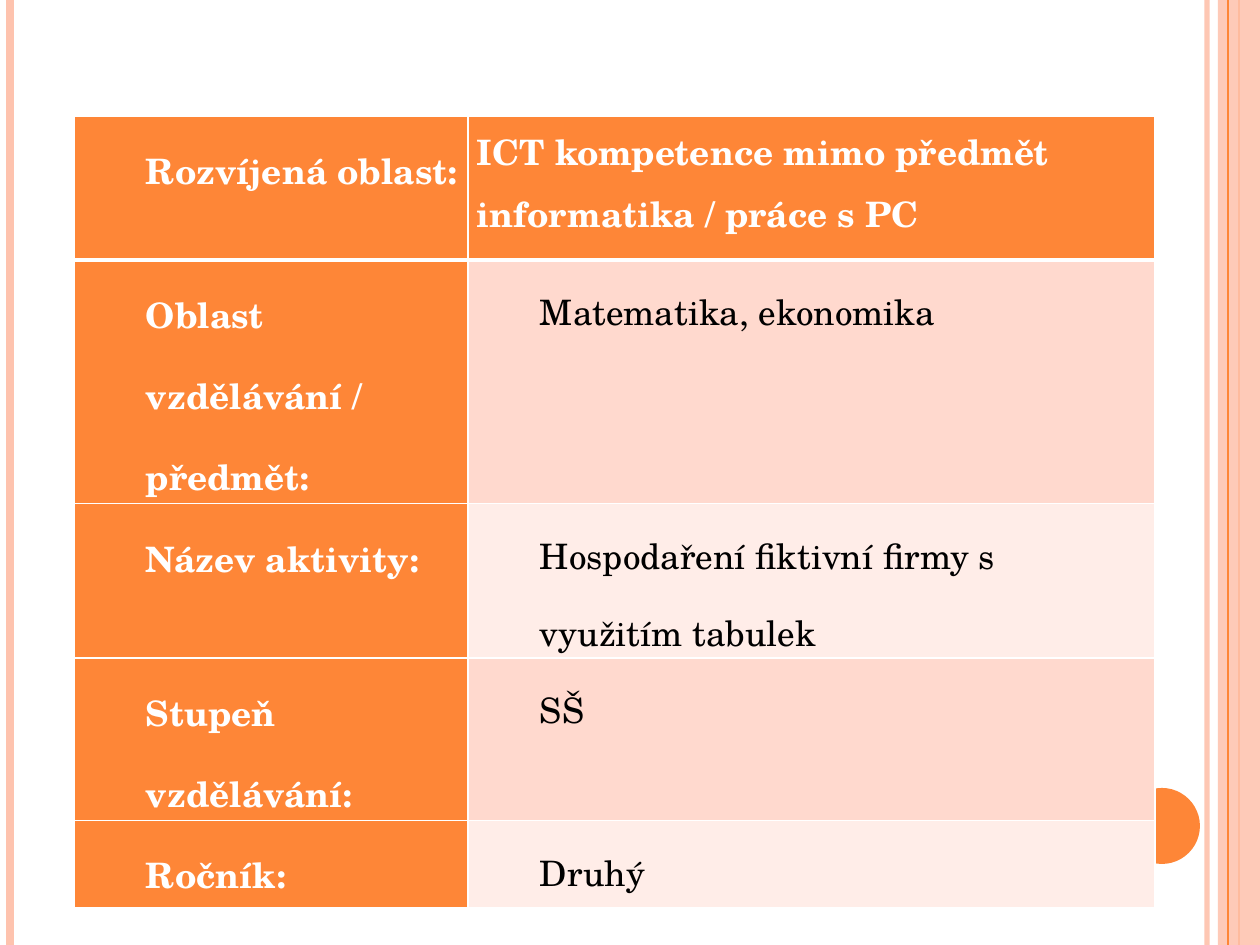
from pptx import Presentation
from pptx import util as u
from pptx.dml.color import RGBColor
from pptx.enum import shapes
from pptx.oxml.ns import qn
from lxml import etree

SCALE = 914400 / 126
FONT = "TeX Gyre Schola"
ORANGE, PEACH, WHITE, BLACK = "FE8637", "FEC3AE", "FFFFFF", "000000"
BANDS = ["FFD9CE", "FFEDE8"]
PAGE_WIDTH, PAGE_HEIGHT = 1260, 945

ROWS = [
    ("Rozvíjená oblast:", "ICT kompetence mimo předmět informatika / práce s PC"),
    ("Oblast vzdělávání / předmět:", "Matematika, ekonomika"),
    ("Název aktivity:", "Hospodaření fiktivní firmy s využitím tabulek"),
    ("Stupeň vzdělávání:", "SŠ"),
    ("Ročník:", "Druhý"),
]
ROW_HEIGHTS = [144, 183, 87, 87, 87]
COLUMN_WIDTHS = [394, 687]

# x, colour, width in points, opacity in percent
STRIPES = [(1207, PEACH, 3, 93), (10, PEACH, 4.5, 100), (1239, ORANGE, 1.5, 100)]
INNER_STRIPE = (1228, ORANGE, 0.75, 100)


def px(value):
    return u.Emu(round(value * SCALE))


def color(hex_text):
    return RGBColor.from_string(hex_text)


def set_opacity(element, percent):
    if percent < 100:
        for rgb in element.spPr.iter(qn("a:srgbClr")):
            etree.SubElement(rgb, qn("a:alpha"), val=str(percent * 1000))


def add_stripe(page, x, hex_text, width, opacity):
    """Draw a vertical line over the full height of the page."""
    stripe = page.shapes.add_connector(
        shapes.MSO_CONNECTOR.STRAIGHT, px(x), 0, px(x), px(PAGE_HEIGHT))
    stripe.line.color.rgb = color(hex_text)
    stripe.line.width = u.Pt(width)
    set_opacity(stripe._element, opacity)
    etree.SubElement(stripe._element.spPr, qn("a:effectLst"))


def add_plain_shape(page, kind, bounds, hex_text, opacity=100):
    shape = page.shapes.add_shape(kind, *map(px, bounds))
    shape.shadow.inherit = False
    shape.fill.solid()
    shape.fill.fore_color.rgb = color(hex_text)
    shape.line.fill.background()
    set_opacity(shape._element, opacity)


def set_borders(cell, top, bottom):
    """Give the cell white borders; top and bottom widths are in points."""
    props = cell._tc.get_or_add_tcPr()
    for side, width in (("L", 1), ("R", 1), ("T", top), ("B", bottom)):
        line = etree.SubElement(props, qn("a:ln" + side), w=str(u.Pt(width)))
        fill = etree.SubElement(line, qn("a:solidFill"))
        etree.SubElement(fill, qn("a:srgbClr"), val=WHITE)


def fill_cell(cell, words, fill, emphasized, indented):
    cell.margin_left = cell.margin_right = px(9)
    cell.margin_top = cell.margin_bottom = 0
    cell.fill.solid()
    cell.fill.fore_color.rgb = color(fill)
    para = cell.text_frame.paragraphs[0]
    if indented:
        para._p.get_or_add_pPr().set("marL", str(px(63)))
        para.line_spacing = 1.5
    else:
        para.line_spacing = 1.15
        para.space_after = u.Pt(10)
    span = para.add_run()
    span.text = words
    span.font.name = FONT
    span.font.size = u.Pt(20)
    span.font.bold = emphasized
    span.font.color.rgb = color(WHITE if emphasized else BLACK)


def add_activity_table(page):
    table = page.shapes.add_table(
        len(ROWS), len(COLUMN_WIDTHS), px(74), px(116),
        px(sum(COLUMN_WIDTHS)), px(sum(ROW_HEIGHTS))).table
    for column, width in zip(table.columns, COLUMN_WIDTHS):
        column.width = px(width)
    for r, words in enumerate(ROWS):
        table.rows[r].height = px(ROW_HEIGHTS[r])
        for c, value in enumerate(words):
            cell = table.cell(r, c)
            emphasized = r == 0 or c == 0
            set_borders(cell, top=3 if r == 1 else 1, bottom=3 if r == 0 else 1)
            fill_cell(cell, value, ORANGE if emphasized else BANDS[(r - 1) % 2],
                      emphasized, indented=r > 0 or c == 0)


def main():
    deck = Presentation()
    deck.slide_width, deck.slide_height = px(PAGE_WIDTH), px(PAGE_HEIGHT)
    page = deck.slides.add_slide(deck.slide_layouts[6])
    for stripe in STRIPES:
        add_stripe(page, *stripe)
    add_plain_shape(page, shapes.MSO_SHAPE.RECTANGLE,
                    (1218, 0, 42, PAGE_HEIGHT), PEACH, 87)
    add_stripe(page, *INNER_STRIPE)
    add_plain_shape(page, shapes.MSO_SHAPE.OVAL, (1124, 788, 76, 76), ORANGE)
    add_activity_table(page)
    deck.save("out.pptx")


if __name__ == "__main__":
    main()
